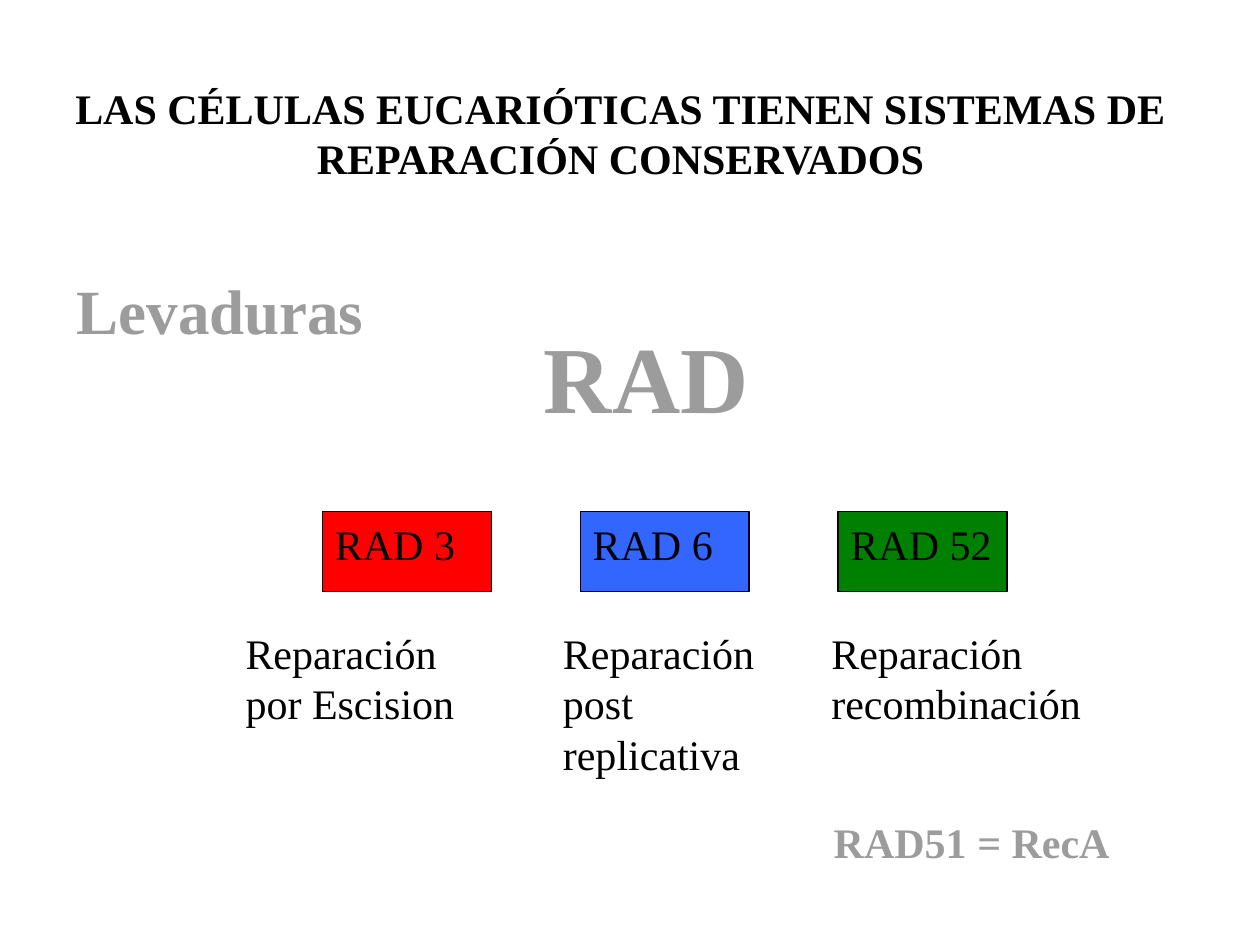
from pptx import Presentation
from pptx.dml.color import RGBColor
from pptx.enum.shapes import MSO_SHAPE
from pptx.enum.text import MSO_ANCHOR, MSO_AUTO_SIZE, PP_ALIGN
from pptx.util import Pt

RECTANGLE = MSO_SHAPE.RECTANGLE
TOP = MSO_ANCHOR.TOP
GROW = MSO_AUTO_SIZE.SHAPE_TO_FIT_TEXT
LEFT, CENTER = PP_ALIGN.LEFT, PP_ALIGN.CENTER
BLACK, GRAY = "000000", "9C9C9C"


def rgb(value):
    return RGBColor.from_string(value)


def write(shape, text, size=24, color=BLACK, bold=False, align=LEFT, wrap=True):
    frame = shape.text_frame
    frame.word_wrap = wrap
    frame.vertical_anchor = TOP
    paragraph = frame.paragraphs[0]
    paragraph.text = text
    paragraph.alignment = align
    font = paragraph.font
    font.name = "Times New Roman"
    font.size = Pt(size)
    font.bold = bold
    font.color.rgb = rgb(color)


presentation = Presentation()
presentation.slide_width = Pt(720)
presentation.slide_height = Pt(540)
slide = presentation.slides.add_slide(presentation.slide_layouts[6])

headings = [
    ("LAS CÉLULAS EUCARIÓTICAS TIENEN SISTEMAS DE REPARACIÓN CONSERVADOS",
     20, 43.5, 669, 65.5, 24, BLACK, CENTER, True),
    ("Levaduras", 36.7, 151.5, 198.5, 51, 36, GRAY, LEFT, True),
    ("RAD", 303, 179, 132.5, 72.5, 54, GRAY, CENTER, False),
    ("RAD51 = RecA", 468, 463, 174.5, 36, 24, GRAY, CENTER, False),
]
for text, left, top, width, height, size, color, align, wrap in headings:
    heading = slide.shapes.add_textbox(Pt(left), Pt(top), Pt(width), Pt(height))
    write(heading, text, size, color, True, align, wrap)
    heading.text_frame.auto_size = GROW

pathways = [
    ("RAD 3", "FF0000", "Reparación por Escision", 133.2, 147.6, 65.5),
    ("RAD 6", "3366FF", "Reparación post replicativa", 314.6, 130.3, 94.5),
    ("RAD 52", "008000", "Reparación recombinación", 468, 170, 65.5),
]
for index, (gene, fill, repair, left, width, height) in enumerate(pathways):
    gene_box = slide.shapes.add_shape(
        RECTANGLE, Pt(184.3 + index * 147.3), Pt(292.5), Pt(96.5), Pt(45.4))
    gene_box.shadow.inherit = False
    gene_box.fill.solid()
    gene_box.fill.fore_color.rgb = rgb(fill)
    gene_box.line.color.rgb = rgb(BLACK)
    gene_box.line.width = Pt(0.75)
    write(gene_box, gene)

    repair_label = slide.shapes.add_textbox(Pt(left), Pt(355), Pt(width), Pt(height))
    write(repair_label, repair)
    repair_label.text_frame.auto_size = GROW

presentation.save("out.pptx")
